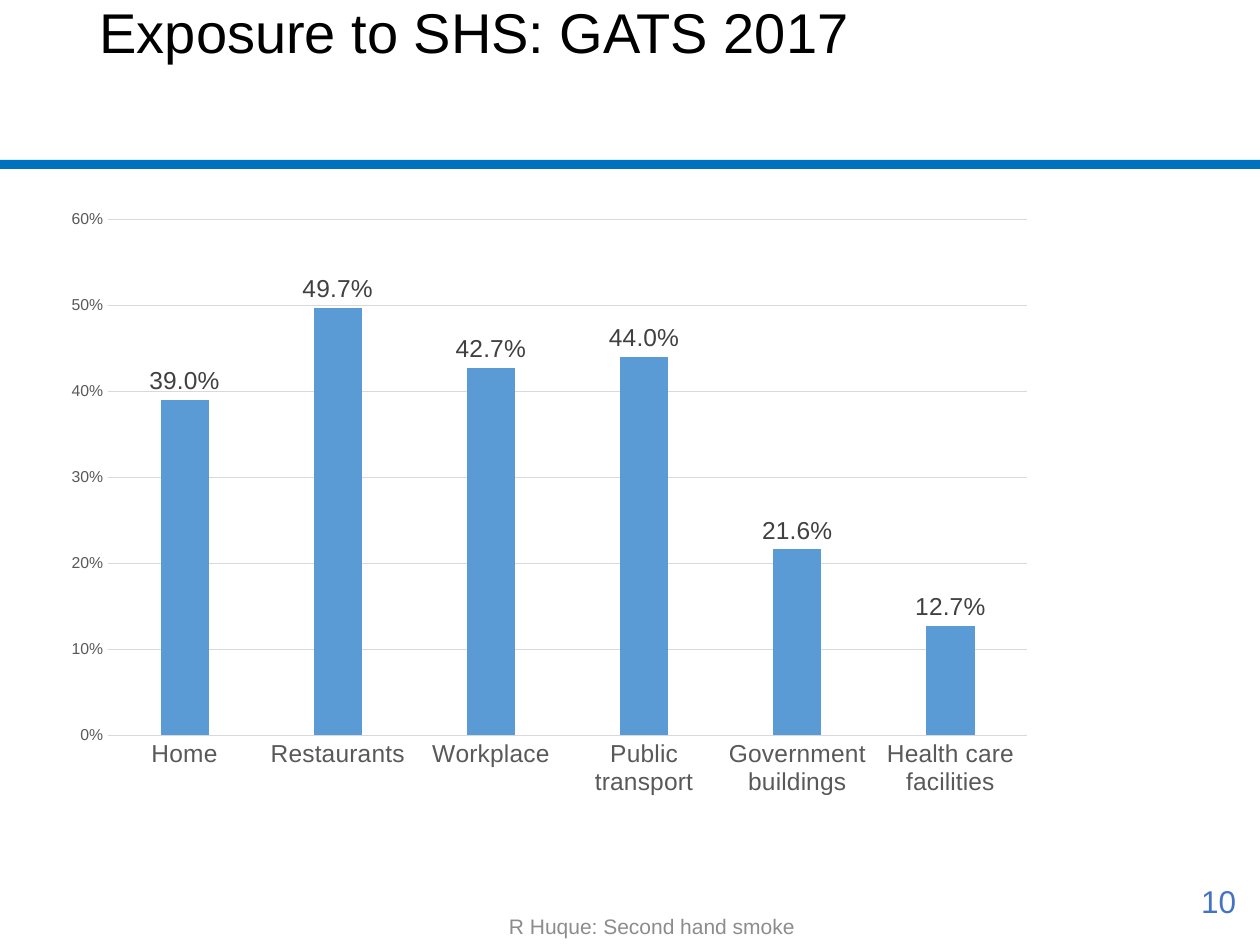
import pptx
import pptx.chart.data
import pptx.dml.color
import pptx.enum.chart
import pptx.enum.shapes
import pptx.enum.text
import pptx.util

Inches = pptx.util.Inches
Pt = pptx.util.Pt
PP_ALIGN = pptx.enum.text.PP_ALIGN
MSO_ANCHOR = pptx.enum.text.MSO_ANCHOR
XL = pptx.enum.chart
FONT = "Arial"
EXPOSURE = {
    "Home": 0.39,
    "Restaurants": 0.497,
    "Workplace": 0.427,
    "Public transport": 0.44,
    "Government buildings": 0.216,
    "Health care facilities": 0.127,
}


def rgb(value):
    """Return a colour from a hex string."""
    return pptx.dml.color.RGBColor.from_string(value)


def style_font(font, size, color):
    """Set the typeface, size and colour of a font."""
    font.name = FONT
    font.size = Pt(size)
    font.color.rgb = rgb(color)


def place(s, left, top, width, height):
    """Move and size a shape, in inches."""
    s.left, s.top = Inches(left), Inches(top)
    s.width, s.height = Inches(width), Inches(height)


def write(s, text, size, color, align, anchor):
    """Write one styled paragraph into a shape."""
    tf = s.text_frame
    tf.word_wrap = True
    tf.auto_size = pptx.enum.text.MSO_AUTO_SIZE.NONE
    tf.vertical_anchor = anchor
    p = tf.paragraphs[0]
    p.alignment = align
    r = p.add_run()
    r.text = text
    style_font(r.font, size, color)
    return p


def add_title(slide, text):
    """Fill the title placeholder."""
    s = slide.shapes.title
    place(s, 0.69, -0.01, 8.62, 1.28)
    p = write(s, text, 32, "000000", PP_ALIGN.LEFT, MSO_ANCHOR.TOP)
    p.line_spacing = 0.9


def add_text(slide, box, text, size, color, align, anchor):
    """Add a text box."""
    s = slide.shapes.add_textbox(*map(Inches, box))
    write(s, text, size, color, align, anchor)


def add_rule(slide):
    """Add the blue band below the title."""
    s = slide.shapes.add_shape(
        pptx.enum.shapes.MSO_SHAPE.RECTANGLE,
        0, Inches(1.27), Inches(10), Inches(0.07))
    s.shadow.inherit = False
    s.fill.solid()
    s.fill.fore_color.rgb = rgb("0070C0")
    s.line.fill.background()


def style_line(line):
    """Make a chart line thin and light grey."""
    line.color.rgb = rgb("D9D9D9")
    line.width = Pt(0.75)


def style_axes(chart):
    """Format the category and value axes."""
    for axis, size in ((chart.category_axis, 14), (chart.value_axis, 9)):
        axis.major_tick_mark = XL.XL_TICK_MARK.NONE
        axis.minor_tick_mark = XL.XL_TICK_MARK.NONE
        style_font(axis.tick_labels.font, size, "595959")
    style_line(chart.category_axis.format.line)
    axis = chart.value_axis
    axis.minimum_scale, axis.maximum_scale, axis.major_unit = 0, 0.6, 0.1
    axis.format.line.fill.background()
    axis.has_major_gridlines = True
    style_line(axis.major_gridlines.format.line)
    axis.tick_labels.number_format = "0%"
    axis.tick_labels.number_format_is_linked = False


def add_exposure_chart(slide):
    """Add the column chart of exposure by place."""
    data = pptx.chart.data.CategoryChartData(number_format="0.0%")
    data.categories = list(EXPOSURE)
    data.add_series("Series 1", list(EXPOSURE.values()))
    chart = slide.shapes.add_chart(
        XL.XL_CHART_TYPE.COLUMN_CLUSTERED, Inches(0.41), Inches(1.57),
        Inches(7.9), Inches(4.84), data).chart
    chart.has_legend = False
    chart.has_title = False
    style_font(chart.font, 10, "000000")
    style_axes(chart)
    plot = chart.plots[0]
    plot.vary_by_categories = False
    plot.gap_width, plot.overlap = 219, -27
    series = plot.series[0]
    series.format.fill.solid()
    series.format.fill.fore_color.rgb = rgb("5B9BD5")
    labels = series.data_labels
    labels.show_value = True
    labels.number_format = "0.0%"
    labels.number_format_is_linked = False
    labels.position = XL.XL_LABEL_POSITION.OUTSIDE_END
    style_font(labels.font, 14, "404040")


def main():
    """Build and save the slide."""
    prs = pptx.Presentation()
    prs.slide_width, prs.slide_height = Inches(10), Inches(7.5)
    slide = prs.slides.add_slide(prs.slide_layouts[5])
    add_rule(slide)
    add_text(slide, (3.31, 7.1, 3.73, 0.4), "R Huque: Second hand smoke",
             12, "8C8C8C", PP_ALIGN.CENTER, MSO_ANCHOR.BOTTOM)
    add_text(slide, (7.66, 6.95, 2.25, 0.4), "10",
             18, "4472C4", PP_ALIGN.RIGHT, MSO_ANCHOR.MIDDLE)
    add_title(slide, "Exposure to SHS: GATS 2017")
    add_exposure_chart(slide)
    prs.save("out.pptx")


if __name__ == "__main__":
    main()
